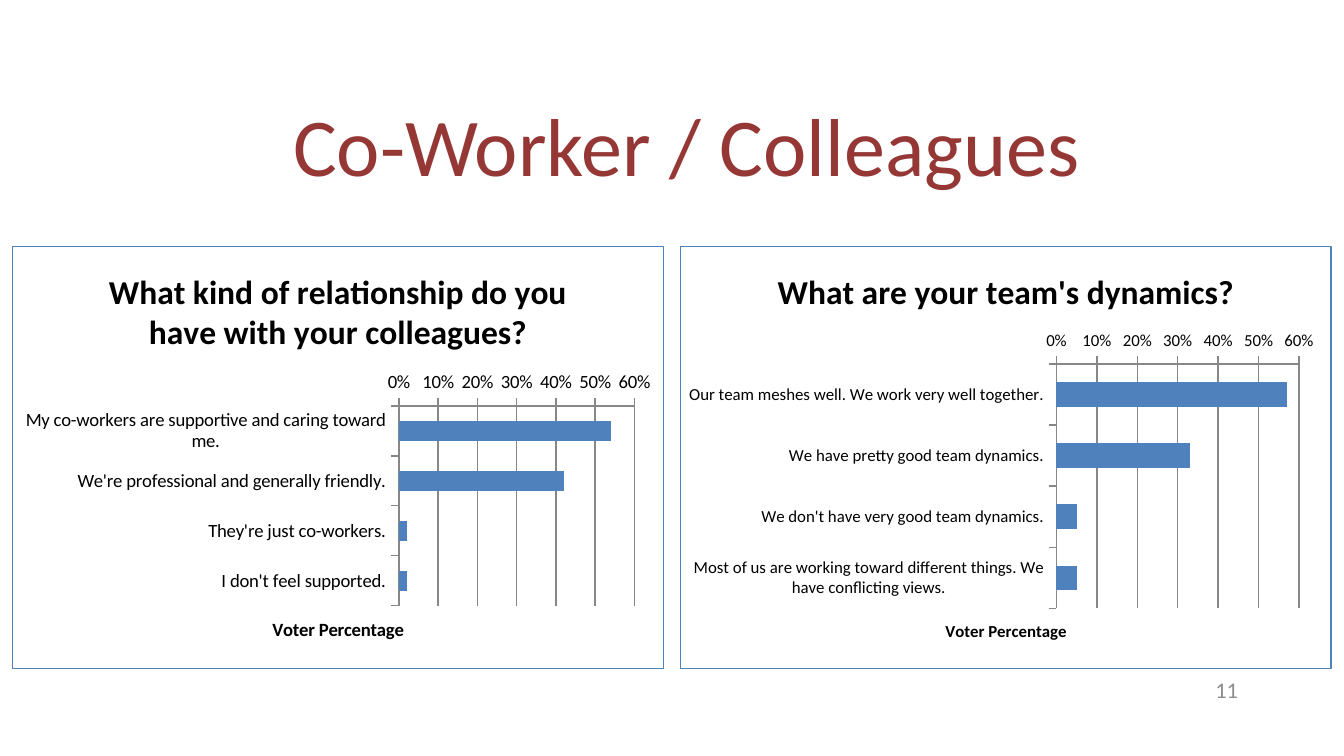
from lxml import etree
from pptx import Presentation
from pptx.chart.data import CategoryChartData
from pptx.dml.color import RGBColor
from pptx.enum.chart import XL_CHART_TYPE as ChartType, XL_TICK_MARK as TickMark
from pptx.enum.text import MSO_ANCHOR as Anchor, PP_ALIGN as Align
from pptx.oxml import parse_xml
from pptx.oxml.ns import nsdecls, qn
from pptx.util import Inches, Pt

COLORS = {"title": "953735", "bar": "4F81BD", "text": "000000", "grid": "878787", "number": "8C8C8C"}
CHART_TOP, CHART_WIDTH, CHART_HEIGHT = 1.83, 4.85, 3.15
CHARTS = [
    (0.09, 10, "What kind of relationship do you have with your colleagues?", {
        "My co-workers are supportive and caring toward me.": 0.54,
        "We're professional and generally friendly.": 0.42,
        "They're just co-workers.": 0.02,
        "I don't feel supported.": 0.02,
    }),
    (5.06, 9, "What are your team's dynamics?", {
        "Our team meshes well. We work very well together.": 0.57,
        "We have pretty good team dynamics.": 0.33,
        "We don't have very good team dynamics.": 0.05,
        "Most of us are working toward different things. We have conflicting views.": 0.05,
    }),
]


class SlideBuilder:
    """Adds styled text and survey charts to one slide."""

    def __init__(self, slide, font_name="Calibri"):
        self.slide = slide
        self.font_name = font_name

    def style(self, font, size, color, bold=False):
        font.name, font.size, font.bold = self.font_name, Pt(size), bold
        font.color.rgb = RGBColor.from_string(COLORS[color])

    def line(self, line_format):
        line_format.color.rgb = RGBColor.from_string(COLORS["grid"])

    def text(self, box, content, size, color, align, spacing=1.0):
        shape = self.slide.shapes.add_textbox(*map(Inches, box))
        frame = shape.text_frame
        frame.word_wrap = True
        frame.vertical_anchor = Anchor.MIDDLE
        paragraph = frame.paragraphs[0]
        paragraph.text = content
        paragraph.alignment = align
        paragraph.line_spacing = spacing
        self.style(paragraph.font, size, color)

    def heading(self, frame, content, size):
        frame.text = content
        self.style(frame.paragraphs[0].font, size, "text", bold=True)

    def border(self, chart):
        properties = parse_xml(
            f'<c:spPr {nsdecls("c", "a")}><a:ln w="{Pt(0.75)}"><a:solidFill/></a:ln></c:spPr>')
        fill = properties.find(".//" + qn("a:solidFill"))
        etree.SubElement(fill, qn("a:srgbClr"), val=COLORS["bar"])
        chart.element.find(qn("c:chart")).addnext(properties)

    def chart(self, left, size, title, votes):
        data = CategoryChartData(number_format="0%")
        data.categories = list(votes)
        data.add_series("Series 1", list(votes.values()))
        box = map(Inches, (left, CHART_TOP, CHART_WIDTH, CHART_HEIGHT))
        chart = self.slide.shapes.add_chart(ChartType.BAR_CLUSTERED, *box, data).chart
        self.style(chart.font, size, "text")
        self.border(chart)
        chart.has_legend = False
        self.heading(chart.chart_title.text_frame, title, 18)

        plot = chart.plots[0]
        plot.gap_width = 150
        plot.vary_by_categories = False
        fill = plot.series[0].format.fill
        fill.solid()
        fill.fore_color.rgb = RGBColor.from_string(COLORS["bar"])

        for axis in (chart.category_axis, chart.value_axis):
            axis.major_tick_mark = TickMark.OUTSIDE
            axis.minor_tick_mark = TickMark.NONE
            self.line(axis.format.line)
        chart.category_axis.reverse_order = True
        values = chart.value_axis
        values.has_major_gridlines = True
        self.line(values.major_gridlines.format.line)
        values.tick_labels.number_format = "0%"
        values.tick_labels.number_format_is_linked = False
        self.heading(values.axis_title.text_frame, "Voter Percentage", size)


def main():
    presentation = Presentation()
    presentation.slide_width = Inches(10)
    presentation.slide_height = presentation.slide_width * 9 // 16
    builder = SlideBuilder(presentation.slides.add_slide(presentation.slide_layouts[6]))
    builder.text((0.8, 0.57, 8.62, 1.09), "Co-Worker / Colleagues", 44, "title", Align.CENTER, 0.9)
    for survey in CHARTS:
        builder.chart(*survey)
    builder.text((7.06, 4.98, 2.25, 0.3), "11", 12, "number", Align.RIGHT)
    presentation.save("out.pptx")


if __name__ == "__main__":
    main()
